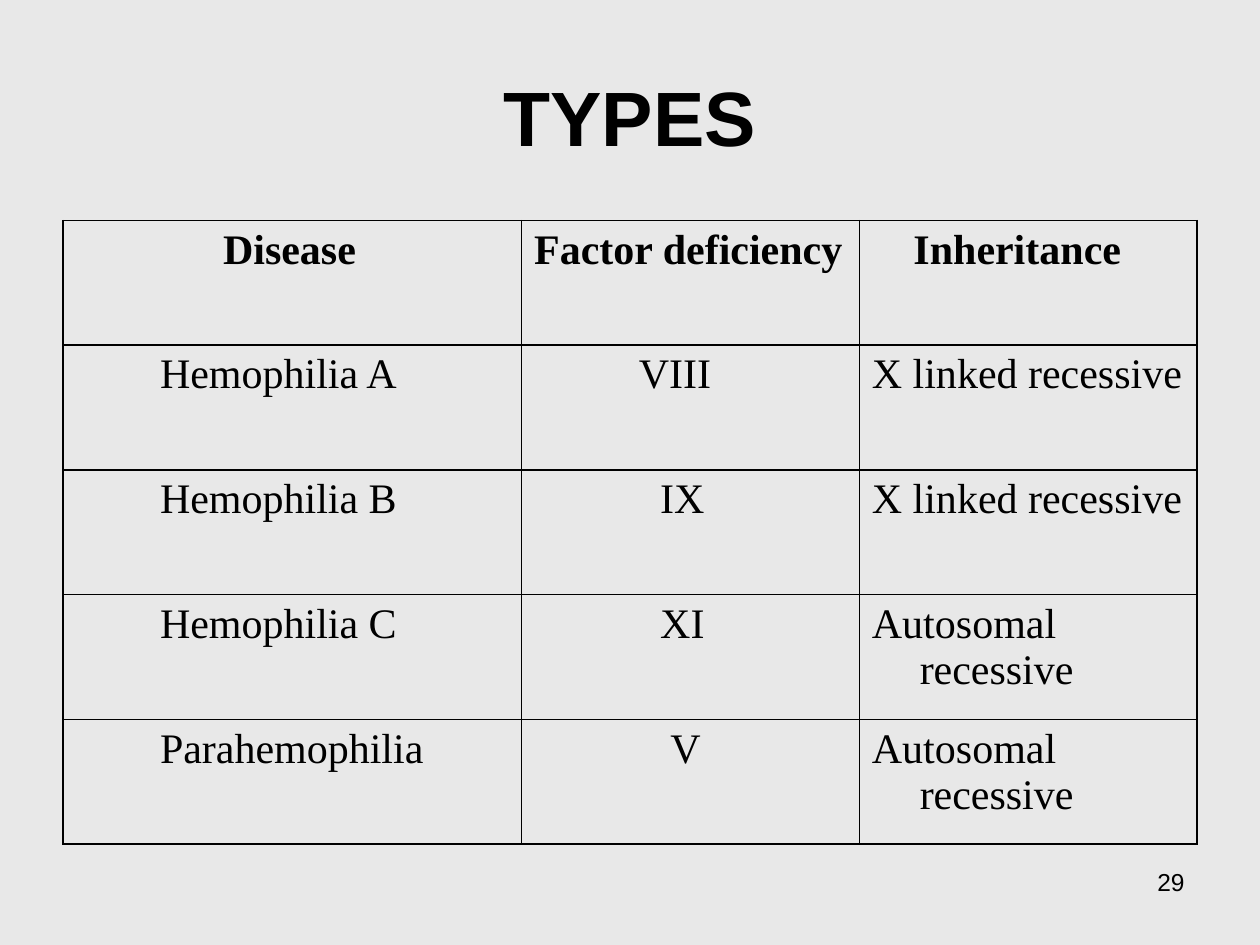
from lxml import etree
from pptx import Presentation
from pptx import util as u
from pptx.dml.color import RGBColor
from pptx.enum import text
from pptx.oxml import ns

BACKGROUND = RGBColor(0xE8, 0xE8, 0xE8)
BLACK = RGBColor(0, 0, 0)
HANGING = 0.38

COLUMN_WIDTHS = (3.64, 2.68, 2.68)
ROW_HEIGHT = 0.99
# Each cell: wording, first-line offset in inches
ROWS = (
    (("Disease", 1.17), ("Factor deficiency", 0), ("Inheritance", 0.33)),
    (("Hemophilia A", 0.67), ("VIII", 0.83), ("X linked recessive", 0)),
    (("Hemophilia B", 0.67), ("IX", 1), ("X linked recessive", 0)),
    (("Hemophilia C", 0.67), ("XI", 1), ("Autosomal recessive", 0)),
    (("Parahemophilia", 0.67), ("V", 1.08), ("Autosomal recessive", 0)),
)


class SlideBuilder:
    def __init__(self, slide):
        self.slide = slide
        fill = slide.background.fill
        fill.solid()
        fill.fore_color.rgb = BACKGROUND

    def add_text(self, frame, wording, alignment, **font_format):
        paragraph = frame.paragraphs[0]
        paragraph.alignment = alignment
        run = paragraph.add_run()
        run.text = wording
        for name, value in font_format.items():
            setattr(run.font, name, value)
        run.font.color.rgb = BLACK
        return paragraph

    def title(self, wording, left, top, width, height):
        shape = self.slide.shapes.title
        bounds = {"left": left, "top": top, "width": width, "height": height}
        for name, value in bounds.items():
            setattr(shape, name, u.Inches(value))
        shape.text_frame.vertical_anchor = text.MSO_ANCHOR.MIDDLE
        self.add_text(shape.text_frame, wording, text.PP_ALIGN.CENTER,
                      name="Arial", size=u.Pt(44), bold=True)

    def text_box(self, wording, left, top, width, height):
        box = self.slide.shapes.add_textbox(*map(u.Inches, (left, top, width, height)))
        box.text_frame.word_wrap = True
        self.add_text(box.text_frame, wording, text.PP_ALIGN.RIGHT,
                      name="Arial", size=u.Pt(14))

    def border(self, cell):
        """Draw a thin black line on all four sides of the cell."""
        properties = cell._tc.get_or_add_tcPr()
        for position, side in enumerate(("lnL", "lnR", "lnT", "lnB")):
            line = etree.Element(ns.qn(f"a:{side}"), w=str(u.Pt(1)))
            fill = etree.SubElement(line, ns.qn("a:solidFill"))
            etree.SubElement(fill, ns.qn("a:srgbClr"), val=str(BLACK))
            properties.insert(position, line)

    def table(self, rows, left, top):
        width, height = sum(COLUMN_WIDTHS), ROW_HEIGHT * len(rows)
        frame = self.slide.shapes.add_table(
            len(rows), len(COLUMN_WIDTHS), *map(u.Inches, (left, top, width, height)))
        table = frame.table
        table.first_row = table.horz_banding = False
        for column, column_width in zip(table.columns, COLUMN_WIDTHS):
            column.width = u.Inches(column_width)
        for row_index, row in enumerate(rows):
            table.rows[row_index].height = u.Inches(ROW_HEIGHT)
            for column_index, (wording, offset) in enumerate(row):
                cell = table.cell(row_index, column_index)
                cell.fill.background()
                self.border(cell)
                paragraph = self.add_text(
                    cell.text_frame, wording, text.PP_ALIGN.LEFT,
                    name="Times New Roman", size=u.Pt(24), bold=row_index == 0)
                properties = paragraph._p.get_or_add_pPr()
                properties.set("marL", str(u.Inches(HANGING)))
                properties.set("indent", str(u.Inches(offset - HANGING)))


def main():
    presentation = Presentation()
    presentation.slide_width = u.Inches(10)
    presentation.slide_height = u.Inches(7.5)
    title_only = presentation.slide_layouts[5]
    builder = SlideBuilder(presentation.slides.add_slide(title_only))
    builder.title("TYPES", 0.5, 0.17, 9, 1.5)
    builder.table(ROWS, 0.5, 1.75)
    builder.text_box("29", 7.17, 6.83, 2.33, 0.52)
    presentation.save("out.pptx")


if __name__ == "__main__":
    main()
